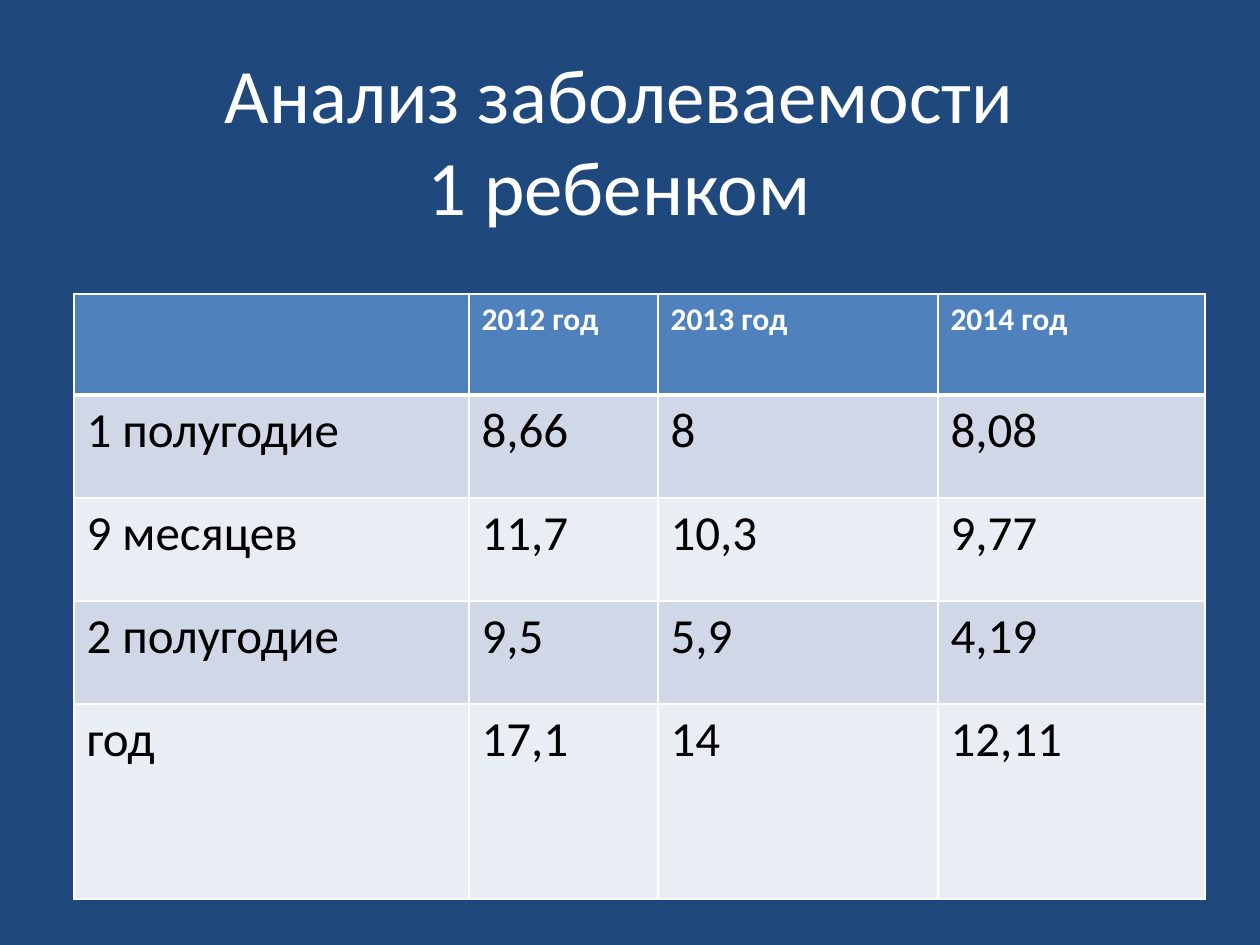
import pptx
import pptx.dml.color
import pptx.enum.text
import pptx.oxml
import pptx.oxml.ns
import pptx.util

RGBColor = pptx.dml.color.RGBColor
NAVY = RGBColor(0x1F, 0x49, 0x7D)
BLUE = RGBColor(0x4F, 0x81, 0xBD)
PALE_BLUE = RGBColor(0xD0, 0xD8, 0xE8)
PALE_GREY = RGBColor(0xE9, 0xED, 0xF4)
WHITE = RGBColor(0xFF, 0xFF, 0xFF)
BLACK = RGBColor(0x00, 0x00, 0x00)

FONT = "Calibri"
PX_PER_INCH = 126
SLIDE_SIZE = (1260, 945)
TITLE_BOX = (84, 37, 1071, 203)
TABLE_BOX = (74, 294, 1131, 605)
COLUMN_WIDTHS = (395, 189, 280, 267)
ROW_HEIGHTS = (101, 103, 103, 103, 195)

TITLE = "Анализ заболеваемости\v1 ребенком"
ROWS = (
    ("", "2012 год", "2013 год", "2014 год"),
    ("1 полугодие", "8,66", "8", "8,08"),
    ("9 месяцев", "11,7", "10,3", "9,77"),
    ("2 полугодие", "9,5", "5,9", "4,19"),
    ("год", "17,1", "14", "12,11"),
)


def px(length):
    """Turn a length in px into EMU."""
    return pptx.util.Emu(round(length * pptx.util.Inches(1) / PX_PER_INCH))


def style_paragraph(paragraph, size, color, bold=False):
    """Set the font of a whole paragraph."""
    paragraph.font.name = FONT
    paragraph.font.size = pptx.util.Pt(size)
    paragraph.font.bold = bold
    paragraph.font.color.rgb = color


def set_borders(cell, widths):
    """Draw white cell borders, given a width in points for each side."""
    properties = cell._tc.get_or_add_tcPr()
    for side in ("L", "R", "T", "B"):
        properties.append(pptx.oxml.parse_xml(
            f'<a:ln{side} {pptx.oxml.ns.nsdecls("a")} w="{pptx.util.Pt(widths[side])}">'
            f'<a:solidFill><a:srgbClr val="{WHITE}"/></a:solidFill></a:ln{side}>'))


def add_title(slide, box):
    """Place the centred title in the box."""
    frame = slide.shapes.add_textbox(*map(px, box)).text_frame
    frame.word_wrap = True
    frame.vertical_anchor = pptx.enum.text.MSO_ANCHOR.MIDDLE
    frame.text = TITLE
    paragraph = frame.paragraphs[0]
    paragraph.alignment = pptx.enum.text.PP_ALIGN.CENTER
    style_paragraph(paragraph, 44, WHITE)


def fill_cell(cell, text, row_index):
    """Write one cell in the style of its row."""
    is_header = row_index == 0
    set_borders(cell, {
        "L": 1,
        "R": 1,
        "T": 3 if row_index == 1 else 1,
        "B": 3 if is_header else 1,
    })
    cell.fill.solid()
    cell.text = text
    paragraph = cell.text_frame.paragraphs[0]
    if is_header:
        cell.fill.fore_color.rgb = BLUE
        style_paragraph(paragraph, 18, WHITE, bold=True)
    else:
        cell.fill.fore_color.rgb = PALE_BLUE if row_index % 2 else PALE_GREY
        style_paragraph(paragraph, 28, BLACK)


def add_morbidity_table(slide, box):
    """Place the table of morbidity by period and year in the box."""
    table = slide.shapes.add_table(
        len(ROWS), len(COLUMN_WIDTHS), *map(px, box)).table
    for column, width in zip(table.columns, COLUMN_WIDTHS):
        column.width = px(width)
    for row, height in zip(table.rows, ROW_HEIGHTS):
        row.height = px(height)
    for row_index, texts in enumerate(ROWS):
        for column_index, text in enumerate(texts):
            fill_cell(table.cell(row_index, column_index), text, row_index)


def main():
    """Build and save the presentation."""
    presentation = pptx.Presentation()
    presentation.slide_width, presentation.slide_height = map(px, SLIDE_SIZE)
    slide = presentation.slides.add_slide(presentation.slide_layouts[6])
    slide.background.fill.solid()
    slide.background.fill.fore_color.rgb = NAVY
    add_title(slide, TITLE_BOX)
    add_morbidity_table(slide, TABLE_BOX)
    presentation.save("out.pptx")


if __name__ == "__main__":
    main()
